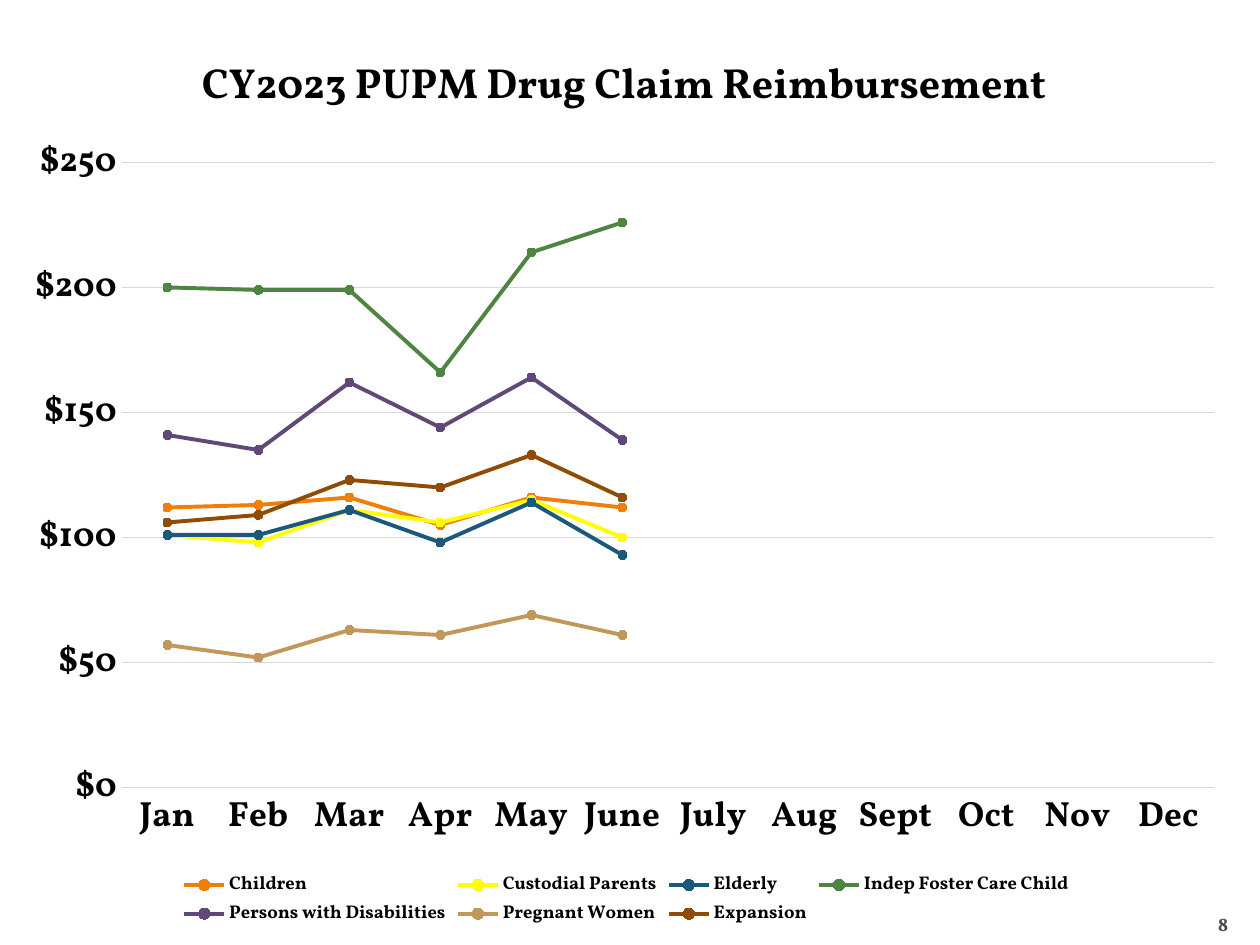
import lxml.etree
import pptx
import pptx.chart.data
import pptx.dml.color
import pptx.enum.chart
import pptx.enum.text
import pptx.oxml.ns
import pptx.util
from pptx.util import Inches

RGB = pptx.dml.color.RGBColor
BLACK = RGB(0x00, 0x00, 0x00)
GRID_GRAY = RGB(0xD9, 0xD9, 0xD9)
NUMBER_GRAY = RGB(0x4D, 0x4D, 0x4D)
ORANGE = RGB(0xF0, 0x7F, 0x09)
YELLOW = RGB(0xFF, 0xFF, 0x00)
BLUE = RGB(0x1B, 0x58, 0x7C)
GREEN = RGB(0x4E, 0x85, 0x42)
PURPLE = RGB(0x60, 0x48, 0x78)
TAN = RGB(0xC1, 0x98, 0x59)
BROWN = RGB(0x90, 0x4C, 0x05)

FONT = "Vollkorn"
MONTHS = ["Jan", "Feb", "Mar", "Apr", "May", "June",
          "July", "Aug", "Sept", "Oct", "Nov", "Dec"]
SERIES = [
    ("Children", ORANGE, [112, 113, 116, 105, 116, 112]),
    ("Custodial Parents", YELLOW, [101, 98, 111, 106, 115, 100]),
    ("Elderly", BLUE, [101, 101, 111, 98, 114, 93]),
    ("Indep Foster Care Child", GREEN, [200, 199, 199, 166, 214, 226]),
    ("Persons with Disabilities", PURPLE, [141, 135, 162, 144, 164, 139]),
    ("Pregnant Women", TAN, [57, 52, 63, 61, 69, 61]),
    ("Expansion", BROWN, [106, 109, 123, 120, 133, 116]),
]


def set_attrs(obj, **values):
    """Set each named value on an object."""
    for name, value in values.items():
        setattr(obj, name, value)


def set_font(font, size, color=BLACK, bold=True):
    """Apply the slide's typeface with a size, colour and weight."""
    set_attrs(font, name=FONT, size=pptx.util.Pt(size), bold=bold)
    font.color.rgb = color


def set_layout(parent, index, **fractions):
    """Place a chart part by fractions of the chart area."""
    qn = pptx.oxml.ns.qn
    for old in parent.findall(qn("c:layout")):
        parent.remove(old)
    layout = lxml.etree.Element(qn("c:layout"))
    manual = lxml.etree.SubElement(layout, qn("c:manualLayout"))
    values = {"xMode": "edge", "yMode": "edge", **fractions}
    if "w" in fractions and parent.tag == qn("c:plotArea"):
        values = {"layoutTarget": "inner", **values}
    for name, value in values.items():
        lxml.etree.SubElement(manual, qn(f"c:{name}")).set("val", str(value))
    parent.insert(index, layout)


def format_axes(chart):
    """Format the month axis and the dollar axis."""
    for axis in (chart.category_axis, chart.value_axis):
        set_attrs(axis, major_tick_mark=pptx.enum.chart.XL_TICK_MARK.NONE,
                  minor_tick_mark=pptx.enum.chart.XL_TICK_MARK.NONE)
        set_font(axis.tick_labels.font, 20)
    value_axis = chart.value_axis
    set_attrs(value_axis, minimum_scale=0, maximum_scale=250, major_unit=50,
              has_major_gridlines=True)
    set_attrs(value_axis.tick_labels, number_format='"$"#,##0',
              number_format_is_linked=False)
    value_axis.format.line.fill.background()
    for part in (chart.category_axis, value_axis.major_gridlines):
        part.format.line.color.rgb = GRID_GRAY
        part.format.line.width = pptx.util.Pt(0.75)


def format_series(chart):
    """Colour each line and its round markers."""
    for series, (_, color, _) in zip(chart.plots[0].series, SERIES):
        series.smooth = False
        series.format.line.color.rgb = color
        series.format.line.width = pptx.util.Pt(2.25)
        marker = series.marker
        set_attrs(marker, style=pptx.enum.chart.XL_MARKER_STYLE.CIRCLE, size=5)
        marker.format.fill.solid()
        marker.format.fill.fore_color.rgb = color
        marker.format.line.color.rgb = color


def add_claims_chart(slide, left, top, width, height):
    """Add the reimbursement line chart in the given box."""
    data = pptx.chart.data.CategoryChartData(number_format='"$"#,##0')
    data.categories = MONTHS
    for name, _, values in SERIES:
        data.add_series(name, values + [None] * (len(MONTHS) - len(values)))
    chart = slide.shapes.add_chart(
        pptx.enum.chart.XL_CHART_TYPE.LINE_MARKERS,
        left, top, width, height, data).chart
    set_font(chart.font, 10, bold=False)
    chart.plots[0].vary_by_categories = False
    format_axes(chart)
    format_series(chart)

    title = chart.chart_title
    p = title.text_frame.paragraphs[0]
    r = p.add_run()
    r.text = "CY2023 PUPM Drug Claim Reimbursement"
    set_font(r.font, 24)
    chart.has_legend = True
    legend = chart.legend
    set_attrs(legend, include_in_layout=False,
              position=pptx.enum.chart.XL_LEGEND_POSITION.BOTTOM)
    set_font(legend.font, 10.5)

    plot_area = chart.plots[0]._element.getparent()
    set_layout(title._element, 1, x=0.15, y=0.04)
    set_layout(plot_area, 0, x=0.091, y=0.165, w=0.889, h=0.677)
    set_layout(legend._element, 1, x=0.137, y=0.93, w=0.73, h=0.066)


def add_page_number(slide, left, top, width, height):
    """Add the page number in the given box."""
    tf = slide.shapes.add_textbox(left, top, width, height).text_frame
    set_attrs(tf, word_wrap=True, margin_left=0, margin_right=0,
              margin_top=Inches(0.05), margin_bottom=0,
              vertical_anchor=pptx.enum.text.MSO_ANCHOR.BOTTOM)
    p = tf.paragraphs[0]
    p.alignment = pptx.enum.text.PP_ALIGN.RIGHT
    r = p.add_run()
    r.text = "8"
    set_font(r.font, 11, NUMBER_GRAY)


def main():
    """Build and save the slide."""
    prs = pptx.Presentation()
    set_attrs(prs, slide_width=Inches(10), slide_height=Inches(7.5))
    slide = prs.slides.add_slide(prs.slide_layouts[6])
    add_page_number(slide, Inches(9.25), Inches(7.02), Inches(0.5), Inches(0.4))
    add_claims_chart(slide, Inches(0.08), Inches(0.08), Inches(9.75), Inches(7.33))
    prs.save("out.pptx")


if __name__ == "__main__":
    main()
